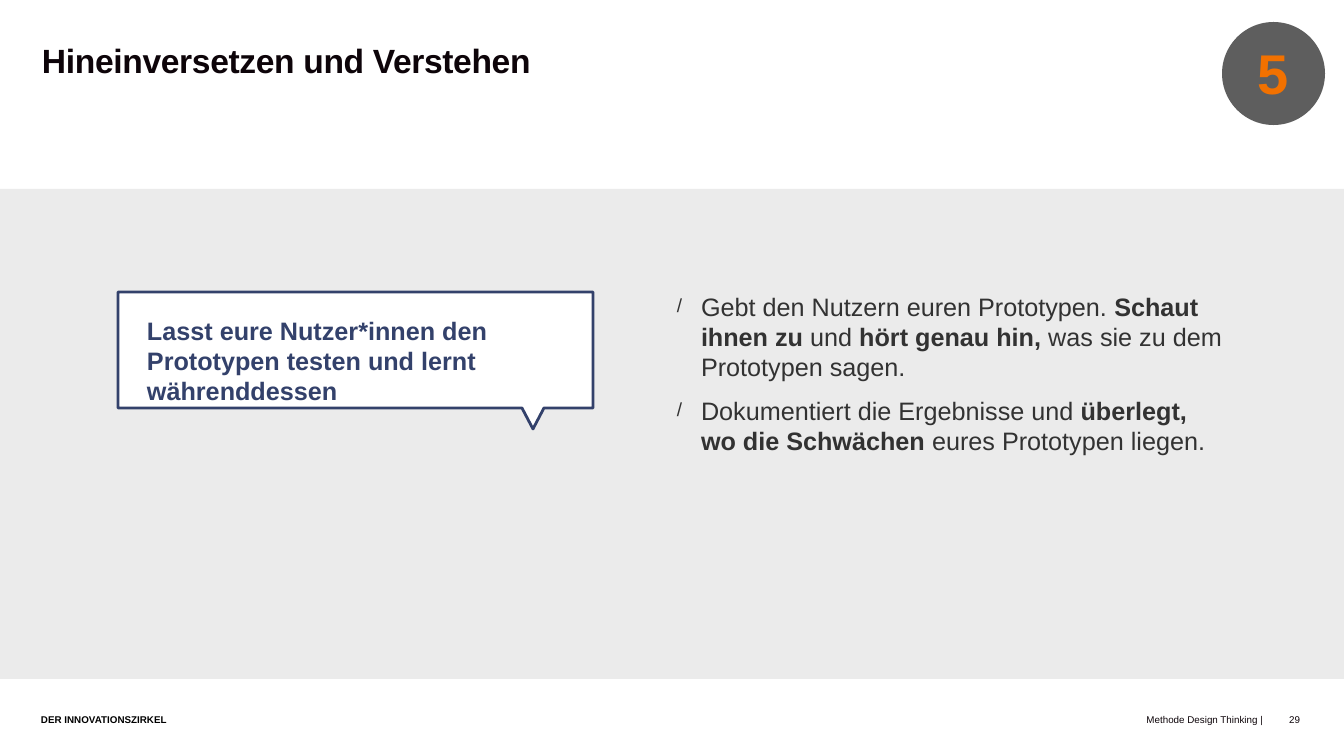
from lxml import etree
from pptx import Presentation
from pptx.dml.color import RGBColor
from pptx.enum.shapes import MSO_SHAPE
from pptx.enum.text import MSO_ANCHOR, PP_ALIGN
from pptx.oxml.ns import qn
from pptx.util import Emu, Pt

RECTANGLE = MSO_SHAPE.RECTANGLE
OVAL = MSO_SHAPE.OVAL
TOP = MSO_ANCHOR.TOP
MIDDLE = MSO_ANCHOR.MIDDLE
LEFT = PP_ALIGN.LEFT
CENTER = PP_ALIGN.CENTER
RIGHT = PP_ALIGN.RIGHT

SCALE = 914400 / 50.4
INK = "0D0409"
BLACK = "000000"
WHITE = "FFFFFF"
GREY_BAND = "EBEBEB"
DARK_GREY = "5E5E5E"
TEXT_GREY = "323232"
NAVY = "33416B"
ORANGE = "F27100"

BULLETS = [
    [("Gebt den Nutzern euren Prototypen. ", False), ("Schaut ihnen zu ", True),
     ("und ", False), ("hört genau hin,", True),
     (" was sie zu dem Prototypen sagen.", False)],
    [("Dokumentiert die Ergebnisse und ", False),
     ("überlegt, wo die Schwächen", True),
     (" eures Prototypen liegen.", False)],
]


def px(length):
    return Emu(round(length * SCALE))


def color(value):
    return RGBColor.from_string(value)


def style_shape(shape, fill, line=None, width=0):
    shape.shadow.inherit = False
    shape.fill.solid()
    shape.fill.fore_color.rgb = color(fill)
    if line:
        shape.line.color.rgb = color(line)
        shape.line.width = Pt(width)
    else:
        shape.line.fill.background()


def add_shape(page, kind, left, top, width, height, fill):
    shape = page.shapes.add_shape(kind, px(left), px(top), px(width), px(height))
    style_shape(shape, fill)


def add_callout(page, points, fill, line, width):
    builder = page.shapes.build_freeform(*points[0], scale=SCALE)
    builder.add_line_segments(points[1:], close=True)
    style_shape(builder.convert_to_shape(), fill, line, width)


def add_frame(page, left, top, width, height, anchor=TOP, wrap=True):
    box = page.shapes.add_textbox(px(left), px(top), px(width), px(height))
    frame = box.text_frame
    frame.margin_left = frame.margin_top = 0
    frame.margin_right = frame.margin_bottom = 0
    frame.word_wrap = wrap
    frame.vertical_anchor = anchor
    return frame


def style_paragraph(paragraph, size, ink, bold=None, align=LEFT, spacing=None):
    paragraph.alignment = align
    if spacing:
        paragraph.line_spacing = Pt(spacing)
    font = paragraph.font
    font.name = "Arial"
    font.size = Pt(size)
    font.color.rgb = color(ink)
    font.bold = bold


def add_text(page, area, text, size, ink, bold=False, align=LEFT, spacing=None,
             tracking=0, anchor=TOP, wrap=True):
    paragraph = add_frame(page, *area, anchor, wrap).paragraphs[0]
    span = paragraph.add_run()
    span.text = text
    style_paragraph(paragraph, size, ink, bold, align, spacing)
    if tracking:
        span._r.get_or_add_rPr().set("spc", str(tracking))


def set_bullet(paragraph, mark, percent, indent):
    properties = paragraph._p.get_or_add_pPr()
    properties.set("marL", str(px(indent)))
    properties.set("indent", str(-px(indent)))
    size = etree.SubElement(properties, qn("a:buSzPct"))
    size.set("val", str(percent * 1000))
    etree.SubElement(properties, qn("a:buFont")).set("typeface", "Arial")
    etree.SubElement(properties, qn("a:buChar")).set("char", mark)


def add_bullets(page, area, items):
    frame = add_frame(page, *area)
    for index, spans in enumerate(items):
        paragraph = frame.add_paragraph() if index else frame.paragraphs[0]
        set_bullet(paragraph, "/", 75, 24)
        if index:
            paragraph.space_before = Pt(20)
        style_paragraph(paragraph, 36, TEXT_GREY, spacing=43)
        for text, bold in spans:
            span = paragraph.add_run()
            span.text = text
            span.font.bold = bold


def add_footer(page):
    add_text(page, (1289, 714, 11, 12), "29", 14, INK,
             align=RIGHT, spacing=16, wrap=False)
    add_text(page, (645, 714, 618, 12), "Methode Design Thinking |", 14, INK,
             align=RIGHT, spacing=16)
    add_text(page, (41, 714, 618, 12), "DER INNOVATIONSZIRKEL", 14, BLACK,
             bold=True, spacing=16)


def main():
    deck = Presentation()
    deck.slide_width = px(1344)
    deck.slide_height = px(756)
    page = deck.slides.add_slide(deck.slide_layouts[6])

    add_footer(page)
    add_text(page, (42, 42, 1260, 76), "Hineinversetzen und Verstehen", 48, INK,
             bold=True, spacing=54, tracking=-50)
    add_shape(page, RECTANGLE, -17, 189, 1379, 490, GREY_BAND)
    add_callout(page, [(118, 292), (118, 408), (522, 408), (533, 429),
                       (544, 408), (593, 408), (593, 292)], WHITE, NAVY, 4)
    add_bullets(page, (677, 291, 550, 254), BULLETS)
    add_text(page, (147, 315, 418, 94),
             "Lasst eure Nutzer*innen den Prototypen testen und lernt währenddessen",
             36, NAVY, bold=True, spacing=43)
    add_shape(page, OVAL, 1222, 22, 103, 103, DARK_GREY)
    add_text(page, (1258, 39, 30, 67), "5", 80, ORANGE, bold=True, align=CENTER,
             tracking=-240, anchor=MIDDLE, wrap=False)
    deck.save("out.pptx")


if __name__ == "__main__":
    main()
